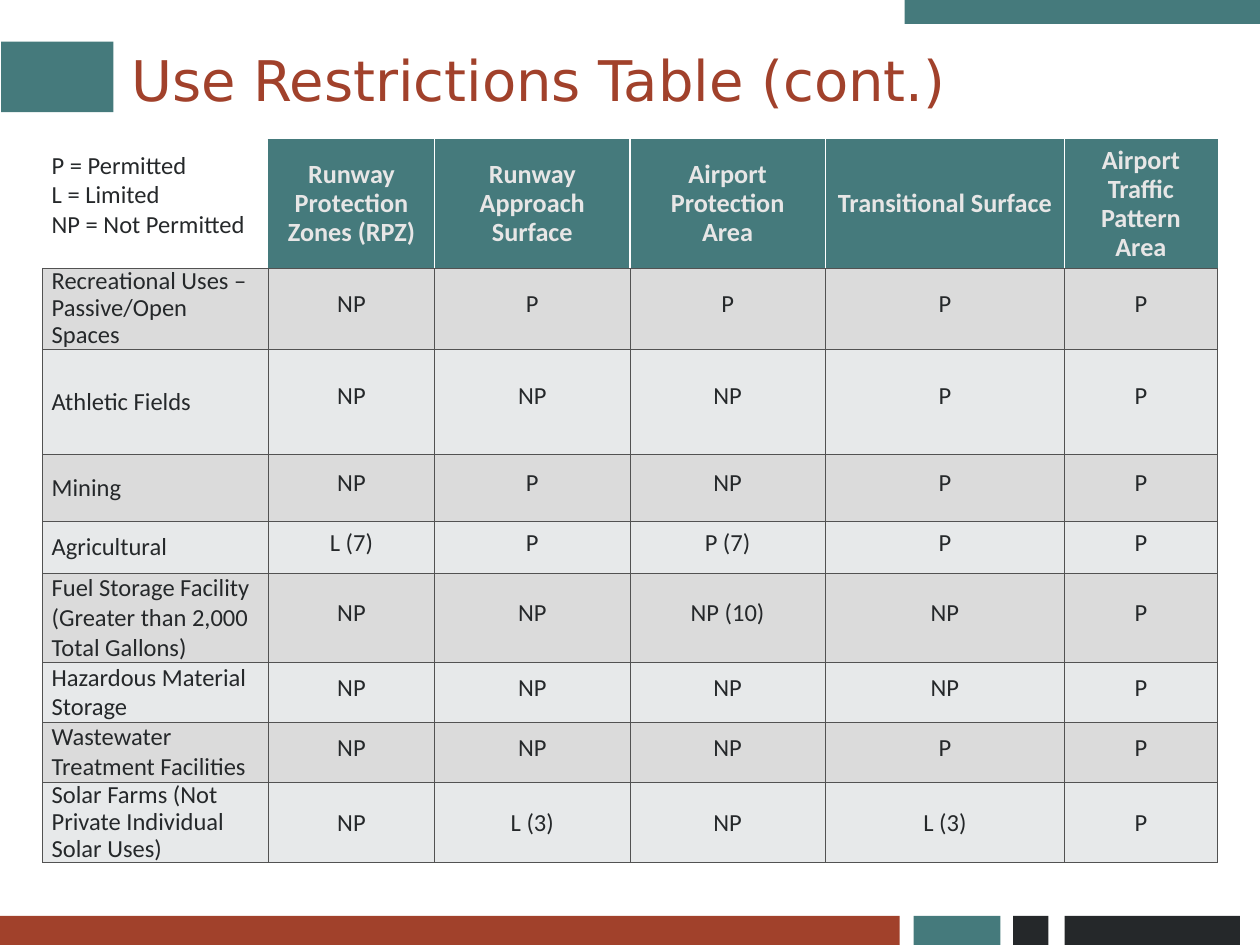
from dataclasses import dataclass
from typing import NamedTuple, Optional

from lxml.etree import SubElement
from pptx import Presentation
from pptx.dml.color import RGBColor
from pptx.enum.shapes import MSO_SHAPE
from pptx.enum.text import MSO_ANCHOR, PP_ALIGN
from pptx.oxml.ns import qn
from pptx.util import Emu, Inches, Pt


@dataclass(frozen=True)
class Theme:
    teal: str = "457A7C"
    rust: str = "A1412B"
    ink: str = "25282A"
    rule: str = "525252"
    white: str = "FFFFFF"
    header_text: str = "E7E6E6"
    bands: tuple = ("DBDBDB", "E7E9EA")
    title_font: str = "DejaVu Sans"
    body_font: str = "Calibri"
    title_size: int = 32
    header_size: int = 15
    body_size: int = 14


class Region(NamedTuple):
    """Left, top, width and height in grid cells."""
    left: int
    top: int
    width: int
    height: int


class Bar(NamedTuple):
    region: Region
    color: str


class Use(NamedTuple):
    label: str
    values: tuple
    height: int
    label_spacing: float
    value_spacing: object


THEME = Theme()
SLIDE_WIDTH, SLIDE_HEIGHT = Inches(10), Inches(7.5)
GRID_COLUMNS, GRID_ROWS = 1000, 750

BARS = (
    Bar(Region(718, 0, 282, 19), THEME.teal),
    Bar(Region(804, 727, 28, 23), THEME.ink),
    Bar(Region(725, 727, 69, 23), THEME.teal),
    Bar(Region(845, 727, 139, 23), THEME.ink),
    Bar(Region(0, 727, 714, 23), THEME.rust),
    Bar(Region(1, 33, 89, 56), THEME.teal),
)
TITLE_REGION = Region(66, 13, 867, 106)
LEGEND_REGION = Region(24, 114, 251, 81)
TABLE_REGION = Region(34, 111, 932, 573)

LEGEND = ("P = Permitted", "L = Limited", "NP = Not Permitted")
HEADERS = ("Runway Protection Zones (RPZ)", "Runway Approach Surface",
           "Airport Protection Area", "Transitional Surface",
           "Airport Traffic Pattern Area")
COLUMN_WIDTHS = (179, 132, 155, 155, 190, 121)
HEADER_HEIGHT = 102
USES = (
    Use("Recreational Uses – Passive/Open Spaces",
        ("NP", "P", "P", "P", "P"), 64, 0.9, Pt(12.1)),
    Use("Athletic Fields", ("NP", "NP", "NP", "P", "P"), 84, 1.0, Pt(10.7)),
    Use("Mining", ("NP", "P", "NP", "P", "P"), 53, 1.0, Pt(11.8)),
    Use("Agricultural", ("L (7)", "P", "P (7)", "P", "P"), 41, 1.0, Pt(11.8)),
    Use("Fuel Storage Facility (Greater than 2,000 Total Gallons)",
        ("NP", "NP", "NP (10)", "NP", "P"), 71, 1.0, Pt(11.8)),
    Use("Hazardous Material Storage",
        ("NP", "NP", "NP", "NP", "P"), 47, 1.0, Pt(11.8)),
    Use("Wastewater Treatment Facilities",
        ("NP", "NP", "NP", "P", "P"), 47, 1.0, Pt(11.8)),
    Use("Solar Farms (Not Private Individual Solar Uses)",
        ("NP", "L (3)", "NP", "L (3)", "P"), 64, 0.9, 1.07),
)


def across(columns: int) -> Emu:
    return Emu(SLIDE_WIDTH * columns // GRID_COLUMNS)


def down(rows: int) -> Emu:
    return Emu(SLIDE_HEIGHT * rows // GRID_ROWS)


def place(region: Region) -> tuple:
    return (across(region.left), down(region.top),
            across(region.width), down(region.height))


def set_values(target, values: dict) -> None:
    for name, value in values.items():
        setattr(target, name, value)


def write(paragraph, text: str, size: int, color: str,
          font: str = THEME.body_font, bold: bool = False,
          align=PP_ALIGN.LEFT, spacing=1.0) -> None:
    run = paragraph.add_run()
    run.text = text
    set_values(paragraph, {"alignment": align, "line_spacing": spacing,
                           "space_before": Pt(0), "space_after": Pt(0)})
    set_values(run.font, {"name": font, "size": Pt(size), "bold": bold})
    run.font.color.rgb = RGBColor.from_string(color)


def draw_bar(slide, bar: Bar) -> None:
    shape = slide.shapes.add_shape(MSO_SHAPE.RECTANGLE, *place(bar.region))
    shape.shadow.inherit = False
    shape.fill.solid()
    shape.fill.fore_color.rgb = RGBColor.from_string(bar.color)
    shape.line.fill.background()


def draw_title(slide, text: str) -> None:
    title = slide.shapes.title
    title.left, title.top, title.width, title.height = place(TITLE_REGION)
    set_values(title.text_frame, {"margin_left": across(38), "word_wrap": True,
                                  "vertical_anchor": MSO_ANCHOR.MIDDLE})
    write(title.text_frame.paragraphs[0], text, THEME.title_size, THEME.rust,
          THEME.title_font, spacing=0.9)


def set_border(cell, side: str, color: Optional[str], width: float) -> None:
    line = SubElement(cell._tc.get_or_add_tcPr(), qn(f"a:ln{side}"),
                      w=str(Pt(width)))
    if color is None:
        SubElement(line, qn("a:noFill"))
    else:
        fill = SubElement(line, qn("a:solidFill"))
        SubElement(fill, qn("a:srgbClr"), val=color)


def format_cell(cell, borders: dict, fill: Optional[str]) -> None:
    cell.vertical_anchor = MSO_ANCHOR.MIDDLE
    for side, (color, width) in borders.items():
        set_border(cell, side, color, width)
    if fill is None:
        cell.fill.background()
    else:
        cell.fill.solid()
        cell.fill.fore_color.rgb = RGBColor.from_string(fill)


def draw_header(table) -> None:
    bottom = (THEME.rule, 0.5)
    teal, white = (THEME.teal, 1), (THEME.white, 1)
    format_cell(table.cell(0, 0), {"L": (None, 0), "R": teal,
                                   "T": (None, 0), "B": bottom}, None)
    for column, text in enumerate(HEADERS, 1):
        cell = table.cell(0, column)
        format_cell(cell, {"L": teal if column == 1 else white,
                           "R": teal if column == len(HEADERS) else white,
                           "T": teal, "B": bottom}, THEME.teal)
        write(cell.text_frame.paragraphs[0], text, THEME.header_size,
              THEME.header_text, bold=True, align=PP_ALIGN.CENTER, spacing=0.9)


def draw_use(table, row: int, use: Use) -> None:
    borders = dict.fromkeys("LRTB", (THEME.rule, 0.5))
    band = THEME.bands[(row - 1) % len(THEME.bands)]
    for column, text in enumerate((use.label, *use.values)):
        cell = table.cell(row, column)
        is_label = column == 0
        set_values(cell, {"margin_left": across(7 if is_label else 0),
                          "margin_right": across(12 if is_label else 0),
                          "margin_top": 0, "margin_bottom": 0})
        format_cell(cell, borders, band)
        write(cell.text_frame.paragraphs[0], text, THEME.body_size, THEME.ink,
              align=PP_ALIGN.LEFT if is_label else PP_ALIGN.CENTER,
              spacing=use.label_spacing if is_label else use.value_spacing)


def draw_table(slide) -> None:
    table = slide.shapes.add_table(len(USES) + 1, len(COLUMN_WIDTHS),
                                   *place(TABLE_REGION)).table
    set_values(table, {"first_row": False, "horz_banding": False})
    for column, width in zip(table.columns, COLUMN_WIDTHS):
        column.width = across(width)
    heights = (HEADER_HEIGHT, *(use.height for use in USES))
    for row, height in zip(table.rows, heights):
        row.height = down(height)
    draw_header(table)
    for row, use in enumerate(USES, 1):
        draw_use(table, row, use)


def draw_legend(slide) -> None:
    frame = slide.shapes.add_textbox(*place(LEGEND_REGION)).text_frame
    set_values(frame, {"word_wrap": True, "margin_left": across(17)})
    for index, text in enumerate(LEGEND):
        paragraph = frame.add_paragraph() if index else frame.paragraphs[0]
        write(paragraph, text, THEME.body_size, THEME.ink)


def main() -> None:
    presentation = Presentation()
    set_values(presentation, {"slide_width": SLIDE_WIDTH,
                              "slide_height": SLIDE_HEIGHT})
    slide = presentation.slides.add_slide(presentation.slide_layouts[5])
    # Decorative bars and title
    for bar in BARS:
        draw_bar(slide, bar)
    draw_title(slide, "Use Restrictions Table (cont.)")
    # Restrictions by zone, with the key to its codes
    draw_table(slide)
    draw_legend(slide)
    presentation.save("out.pptx")


if __name__ == "__main__":
    main()
